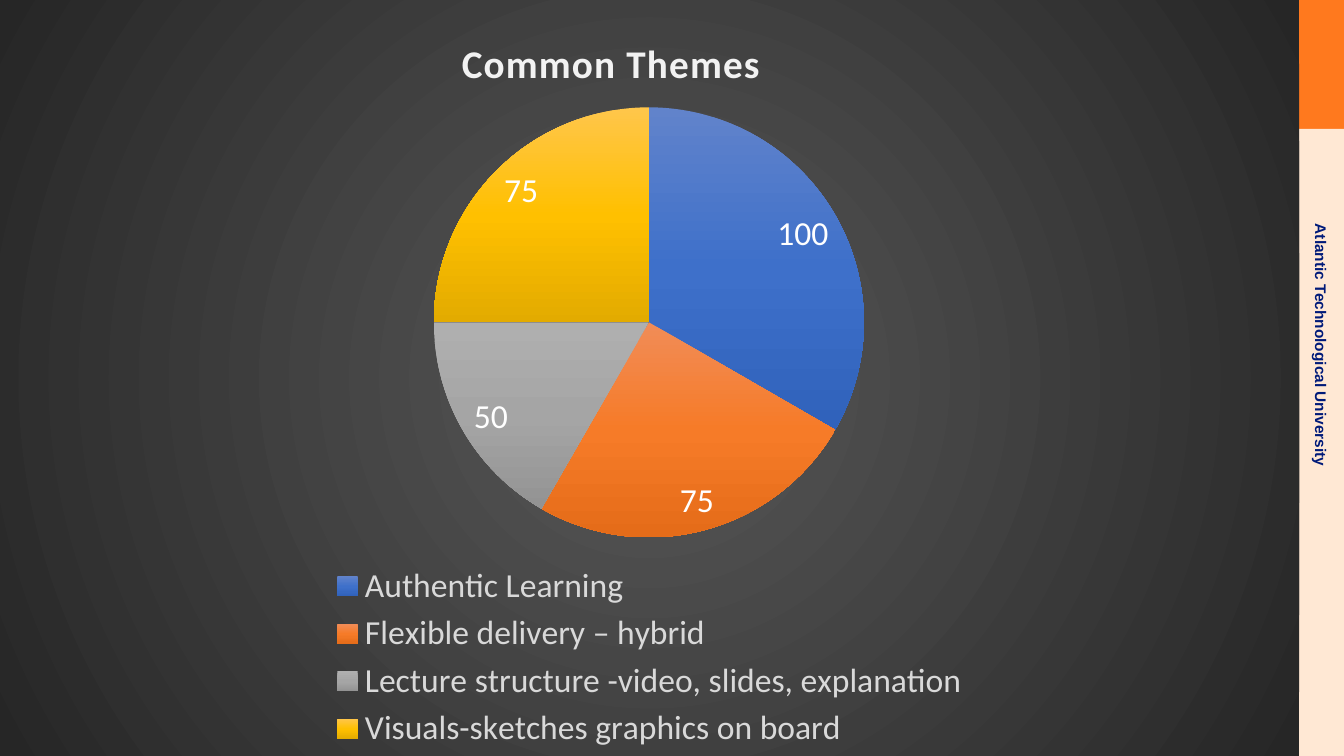
import pptx
import pptx.chart.data
import pptx.dml.color
import pptx.enum.chart
import pptx.enum.shapes
import pptx.enum.text
import pptx.oxml
import pptx.oxml.ns
import pptx.util
from dataclasses import dataclass
from pptx.util import Cm


@dataclass(frozen=True)
class Theme:
    body_font: str = "Calibri"
    strip_font: str = "Arial"
    title_size: int = 28
    chart_size: int = 24
    strip_size: int = 11
    orange: str = "FF791E"
    peach: str = "FFE8D4"
    navy: str = "001A79"
    title: str = "F2F2F2"
    legend: str = "D9D9D9"
    label: str = "FFFFFF"
    backdrop: tuple = ("595959", "262626")
    slices: tuple = (
        ("6183CB", "3E70CA", "3062BB"),
        ("F18C57", "F67B28", "E56C19"),
        ("AFAFAF", "A5A5A5", "939393"),
        ("FFC64B", "FFC000", "E3AB00"),
    )


LINEAR = '<a:lin ang="5400000" scaled="0"/>'
RADIAL = '<a:path path="circle"><a:fillToRect l="50000" t="50000" r="50000" b="50000"/></a:path>'


def gradient(colours, direction):
    """Return a gradient fill element with evenly spaced stops."""
    step = 100000 // (len(colours) - 1)
    stops = "".join(
        f'<a:gs pos="{index * step}"><a:srgbClr val="{colour}"/></a:gs>'
        for index, colour in enumerate(colours))
    return pptx.oxml.parse_xml(
        f'<a:gradFill {pptx.oxml.ns.nsdecls("a")} rotWithShape="1">'
        f'<a:gsLst>{stops}</a:gsLst>{direction}</a:gradFill>')


def manual_layout(inner=False, **fractions):
    """Return a chart layout element; lengths are fractions of the chart."""
    target = '<c:layoutTarget val="inner"/>' if inner else ""
    modes = "".join(f'<c:{side}Mode val="edge"/>' for side in "xy")
    sizes = "".join(f'<c:{name} val="{value}"/>' for name, value in fractions.items())
    return pptx.oxml.parse_xml(
        f'<c:layout {pptx.oxml.ns.nsdecls("c")}><c:manualLayout>'
        f'{target}{modes}{sizes}</c:manualLayout></c:layout>')


def place(element, layout, after=None):
    """Give a chart part its layout, in the position the schema asks for."""
    for old in element.findall(pptx.oxml.ns.qn("c:layout")):
        element.remove(old)
    if after is None:
        element.insert(0, layout)
    else:
        element.find(pptx.oxml.ns.qn(after)).addnext(layout)


class SlideBuilder:
    def __init__(self, slide, theme):
        self.slide = slide
        self.theme = theme

    def style(self, font, size, colour, name, bold=False):
        font.size = pptx.util.Pt(size)
        font.name = name
        font.bold = bold
        font.color.rgb = pptx.dml.color.RGBColor.from_string(colour)

    def block(self, left, top, width, height, colour):
        shape = self.slide.shapes.add_shape(
            pptx.enum.shapes.MSO_SHAPE.RECTANGLE, left, top, width, height)
        shape.shadow.inherit = False
        shape.fill.solid()
        shape.fill.fore_color.rgb = pptx.dml.color.RGBColor.from_string(colour)
        shape.line.fill.background()

    def side_text(self, left, top, width, height, text):
        box = self.slide.shapes.add_textbox(left, top, width, height)
        box.rotation = 90
        frame = box.text_frame
        frame.margin_left = frame.margin_right = 0
        frame.margin_top = frame.margin_bottom = 0
        frame.word_wrap = True
        frame.text = text
        self.style(frame.paragraphs[0].runs[0].font, self.theme.strip_size,
                   self.theme.navy, self.theme.strip_font, bold=True)

    def pie(self, left, top, width, height, title, values):
        theme = self.theme
        data = pptx.chart.data.CategoryChartData()
        data.categories = list(values)
        data.add_series("Series 1", list(values.values()))
        chart = self.slide.shapes.add_chart(
            pptx.enum.chart.XL_CHART_TYPE.PIE, left, top, width, height, data).chart
        self.style(chart.font, theme.chart_size, theme.legend, theme.body_font)
        self.chart_backdrop(chart)
        self.chart_title(chart, title)
        self.chart_legend(chart)
        self.slices(chart.plots[0])
        place(chart._chartSpace.chart.plotArea,
              manual_layout(inner=True, x=0.334, y=0.142, w=0.331, h=0.569))

    def chart_backdrop(self, chart):
        properties = pptx.oxml.parse_xml(f'<c:spPr {pptx.oxml.ns.nsdecls("c", "a")}>'
                                         '<a:ln><a:noFill/></a:ln></c:spPr>')
        properties.insert(0, gradient(self.theme.backdrop, RADIAL))
        chart._chartSpace.chart.addnext(properties)

    def chart_title(self, chart, text):
        chart.has_title = True
        frame = chart.chart_title.text_frame
        frame.text = text
        span = frame.paragraphs[0].runs[0]
        self.style(span.font, self.theme.title_size, self.theme.title,
                   self.theme.body_font, bold=True)
        span.font._element.set("spc", "100")
        place(chart.chart_title._element, manual_layout(x=0.35, y=0.04), after="c:tx")
        chart.chart_title.include_in_layout = False

    def chart_legend(self, chart):
        chart.has_legend = True
        legend = chart.legend
        legend.position = pptx.enum.chart.XL_LEGEND_POSITION.BOTTOM
        legend.include_in_layout = False
        self.style(legend.font, self.theme.chart_size, self.theme.legend, self.theme.body_font)
        place(legend._element, manual_layout(x=0.25, y=0.74, w=0.5, h=0.26),
              after="c:legendPos")

    def slices(self, plot):
        plot.vary_by_categories = True
        series = plot.series[0]
        for index, colours in enumerate(self.theme.slices):
            series.points[index].format.line.fill.background()
            properties = series._element.get_or_add_dPt_for_point(index).get_or_add_spPr()
            properties.insert(0, gradient(colours, LINEAR))
        labels = series.data_labels
        labels.show_value = True
        labels.position = pptx.enum.chart.XL_LABEL_POSITION.BEST_FIT
        self.style(labels.font, self.theme.chart_size, self.theme.label, self.theme.body_font)


def main():
    deck = pptx.Presentation()
    deck.slide_width, deck.slide_height = Cm(33.87), Cm(19.05)
    theme = Theme()
    page = SlideBuilder(deck.slides.add_slide(deck.slide_layouts[6]), theme)

    page.block(Cm(32.67), 0, Cm(1.2), Cm(3.25), theme.orange)
    page.block(Cm(32.67), Cm(3.25), Cm(1.2), Cm(15.8), theme.peach)
    page.side_text(Cm(30.05), Cm(8.64), Cm(6.48), Cm(0.48),
                   "Atlantic Technological University")
    page.pie(0, 0, Cm(32.74), Cm(19.05), "Common Themes", {
        "Authentic Learning": 100,
        "Flexible delivery – hybrid": 75,
        "Lecture structure -video, slides, explanation": 50,
        "Visuals-sketches graphics on board": 75,
    })
    deck.save("out.pptx")


if __name__ == "__main__":
    main()
